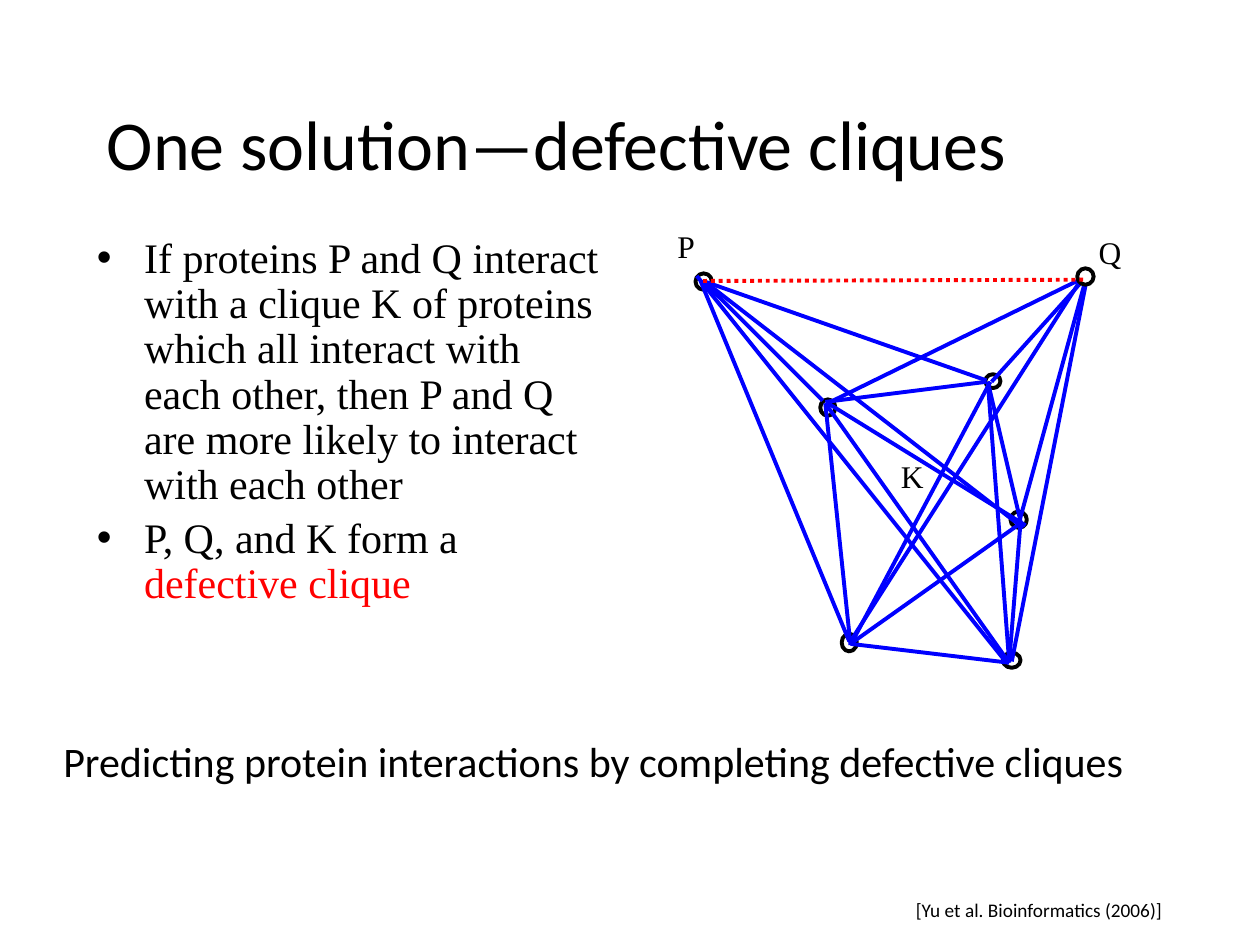
import pptx
import pptx.util
import pptx.dml.color
import pptx.enum.dml
import pptx.enum.shapes
import pptx.enum.text
from lxml import etree

Inches = pptx.util.Inches
Pt = pptx.util.Pt
ALIGN = pptx.enum.text.PP_ALIGN
ANCHOR = pptx.enum.text.MSO_ANCHOR
BLACK, WHITE, BLUE, RED = "000000", "FFFFFF", "0000FF", "FF0000"
SANS, SERIF = "Calibri", "Times New Roman"


def color(hex_value):
    return pptx.dml.color.RGBColor.from_string(hex_value)


class SlideBuilder:
    """Holds the drawing style and the current slide."""

    line_width = Pt(2.25)

    def __init__(self, slide):
        self.slide = slide

    def node(self, left, top, width, height):
        shape = self.slide.shapes.add_shape(
            pptx.enum.shapes.MSO_SHAPE.OVAL,
            Inches(left), Inches(top), Inches(width), Inches(height))
        shape.shadow.inherit = False
        shape.fill.solid()
        shape.fill.fore_color.rgb = color(WHITE)
        shape.line.color.rgb = color(BLACK)
        shape.line.width = self.line_width

    def edge(self, start, end, hex_value=BLUE, dash=None):
        connector = self.slide.shapes.add_connector(
            pptx.enum.shapes.MSO_CONNECTOR.STRAIGHT,
            *(Inches(value) for value in start + end))
        connector.line.color.rgb = color(hex_value)
        connector.line.width = self.line_width
        if dash is not None:
            connector.line.dash_style = dash
        properties = connector._element.spPr
        etree.SubElement(properties, pptx.oxml.ns.qn("a:effectLst"))

    def text(self, box, paragraphs, size, font, align=ALIGN.LEFT,
             anchor=ANCHOR.TOP, wrap=True, grow=True, bullets=False):
        """Each paragraph is a list of (text, colour) runs."""
        shape = self.slide.shapes.add_textbox(*(Inches(value) for value in box))
        frame = shape.text_frame
        frame.word_wrap = wrap
        frame.vertical_anchor = anchor
        if grow:
            frame.auto_size = pptx.enum.text.MSO_AUTO_SIZE.SHAPE_TO_FIT_TEXT
        for index, runs in enumerate(paragraphs):
            paragraph = frame.add_paragraph() if index else frame.paragraphs[0]
            paragraph.alignment = align
            if bullets:
                self.bullet(paragraph, size)
            for words, hex_value in runs:
                run = paragraph.add_run()
                run.text = words
                run.font.size = Pt(size)
                run.font.name = font
                run.font.color.rgb = color(hex_value)

    def bullet(self, paragraph, size):
        paragraph.line_spacing = 0.9
        paragraph.space_before = Pt(0.2 * size)
        properties = paragraph._p.get_or_add_pPr()
        indent = Pt(27)
        properties.set("marL", str(indent))
        properties.set("indent", str(-indent))
        for tag, name, value in [("a:buFont", "typeface", "Arial"),
                                 ("a:buChar", "char", "•")]:
            etree.SubElement(properties, pptx.oxml.ns.qn(tag)).set(name, value)


def main():
    presentation = pptx.Presentation()
    presentation.slide_width = Inches(10)
    presentation.slide_height = Inches(7.5)
    builder = SlideBuilder(
        presentation.slides.add_slide(presentation.slide_layouts[6]))

    # Closing statement
    builder.text((0.33, 5.32, 8.76, 1.43),
                 [[("Predicting protein interactions by completing "
                    "defective cliques", BLACK)]],
                 24, SANS, ALIGN.CENTER, ANCHOR.MIDDLE, grow=False)

    # Protein P and the five members of clique K
    for node in [(5.52, 2.17, 0.13, 0.13), (6.51, 3.17, 0.12, 0.13),
                 (7.82, 2.97, 0.12, 0.11), (6.68, 5.03, 0.12, 0.14),
                 (7.96, 5.18, 0.14, 0.12), (8.02, 4.06, 0.13, 0.13)]:
        builder.node(*node)

    # Interactions of P, of Q, and within the clique
    p_edges = [((5.53, 2.19), (7.98, 5.25)), ((5.61, 2.26), (6.53, 3.18)),
               ((5.58, 2.23), (7.83, 3.02)), ((5.6, 2.24), (8.12, 4.19)),
               ((5.56, 2.23), (6.74, 5.09))]
    q_edges = [((8.09, 4.14), (8.63, 2.17)), ((8.03, 5.25), (8.63, 2.19)),
               ((7.87, 3.03), (8.6, 2.22)), ((6.57, 3.2), (8.61, 2.2)),
               ((6.75, 5.09), (8.63, 2.14))]
    clique_edges = [((6.55, 3.19), (7.83, 3.03)), ((6.55, 3.2), (6.75, 5.12)),
                    ((6.57, 3.2), (8.14, 4.17)), ((6.55, 3.2), (8.01, 5.26)),
                    ((6.75, 5.12), (7.86, 3.03)), ((6.75, 5.11), (8.09, 4.16)),
                    ((6.75, 5.11), (8.01, 5.26)), ((7.84, 3.03), (8.01, 5.26)),
                    ((8.1, 4.14), (7.84, 3.03)), ((8.01, 5.25), (8.1, 4.14))]
    for start, end in p_edges + q_edges + clique_edges:
        builder.edge(start, end)

    # Protein Q, the labels and the predicted interaction
    builder.node(8.55, 2.13, 0.13, 0.13)
    for label, box, wrap in [("K", (7.02, 3.58, 0.44, 0.5), False),
                             ("Q", (8.59, 1.8, 0.44, 0.5), True),
                             ("P", (5.25, 1.75, 0.39, 0.5), False)]:
        builder.text(box, [[(label, BLACK)]], 18, SERIF, ALIGN.CENTER, wrap=wrap)
    builder.edge((5.58, 2.23), (8.61, 2.22), RED,
                 pptx.enum.dml.MSO_LINE.ROUND_DOT)

    # Explanation
    builder.text((0.67, 1.83, 4.2, 3.06),
                 [[("If proteins P and Q interact with a clique K of proteins "
                    "which all interact with each other, then P and Q are "
                    "more likely to interact with each other", BLACK)],
                  [("P, Q, and K form a ", BLACK), ("defective clique", RED)]],
                 24, SERIF, grow=False, bullets=True)

    # Citation and heading
    builder.text((7.17, 7.08, 2.18, 0.29),
                 [[("[Yu et al. Bioinformatics (2006)]", BLACK)]],
                 11, SANS, wrap=False)
    builder.text((0.75, 0.75, 8.42, 0.77),
                 [[("One solution—defective cliques", BLACK)]], 40, SANS)

    presentation.save("out.pptx")


if __name__ == "__main__":
    main()
